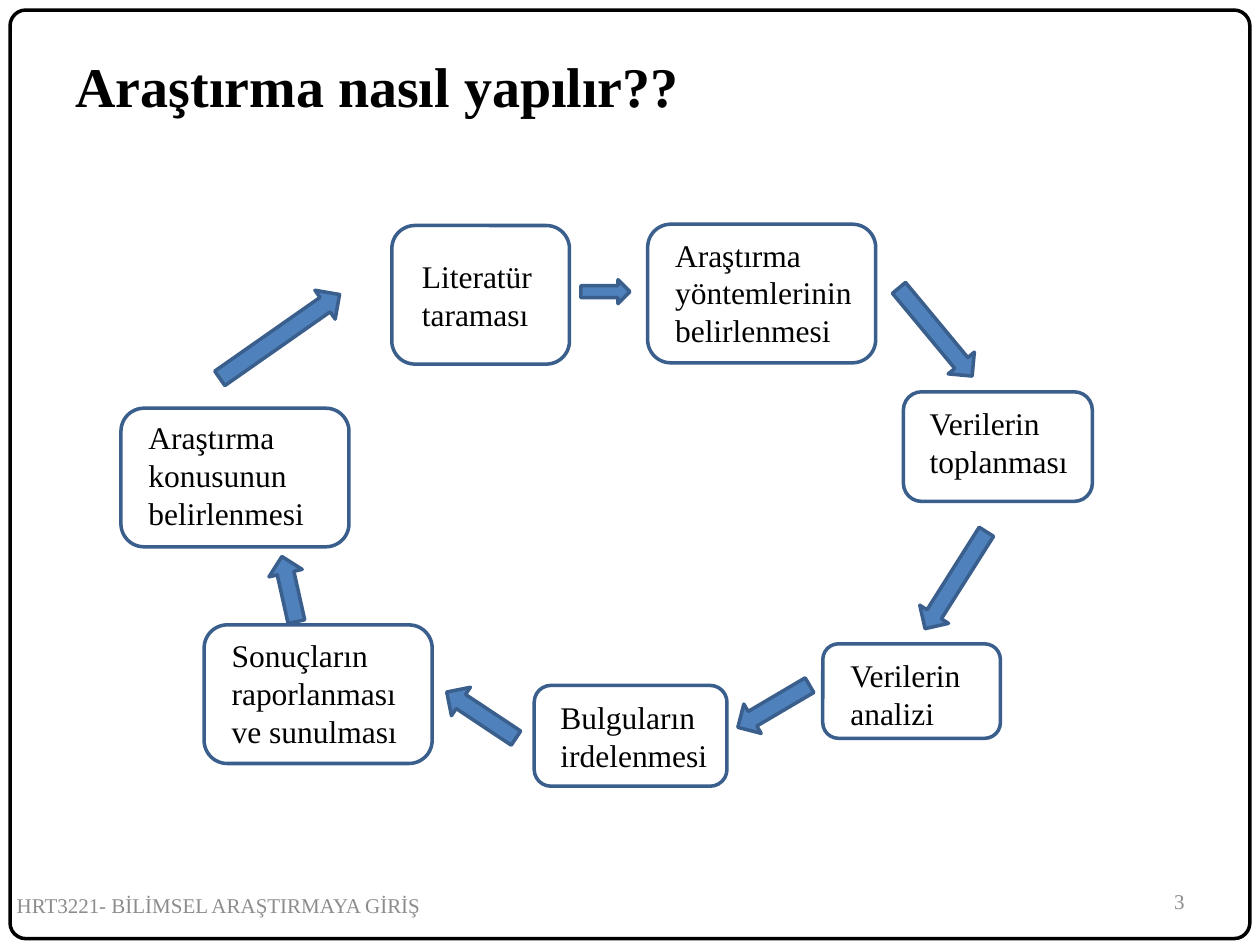
"""Build a slide showing the research cycle as seven boxes joined by arrows."""
from pptx import Presentation
from pptx.dml.color import RGBColor
from pptx.enum.shapes import MSO_SHAPE as Kind
from pptx.enum.text import MSO_ANCHOR as Anchor, PP_ALIGN as Align
from pptx.util import Inches, Pt

deck = Presentation()
deck.slide_width, deck.slide_height = Inches(10), Inches(7.5)
slide = deck.slides.add_slide(deck.slide_layouts[6])
cell = deck.slide_width / 100


def draw(kind, area, line, fill=None):
    shape = slide.shapes.add_shape(kind, *[round(n * cell) for n in area])
    shape.shadow.inherit = False
    shape.line.color.rgb = RGBColor.from_string(line)
    shape.line.width = Pt(2)
    if fill:
        shape.fill.solid()
        shape.fill.fore_color.rgb = RGBColor.from_string(fill)
    else:
        shape.fill.background()
    return shape


def write(words, area, size, color="000000", anchor=Anchor.TOP, align=Align.LEFT, bold=False):
    frame = slide.shapes.add_textbox(*[round(n * cell) for n in area]).text_frame
    frame.word_wrap = True
    frame.vertical_anchor = anchor
    line = frame.paragraphs[0]
    line.text = words
    line.alignment = align
    font = line.font
    font.name, font.size, font.bold = "Times New Roman", Pt(size), bold
    font.color.rgb = RGBColor.from_string(color)


write("Araştırma nasıl yapılır??", (5, 0.5, 90, 12.5), 32, anchor=Anchor.MIDDLE, bold=True)
write("3", (71.7, 69.5, 23.3, 4), 12, "8C8C8C", Anchor.MIDDLE, Align.RIGHT)
write("HRT3221- BİLİMSEL ARAŞTIRMAYA GİRİŞ", (0, 69.8, 34.7, 4), 12, "8C8C8C",
      Anchor.MIDDLE, Align.CENTER)

steps = [
    ("Araştırma konusunun belirlenmesi", (9.6, 32.4, 18.1, 11), (1.2, 0.3, 15.7, 10.1)),
    ("Literatür taraması", (31.1, 17.9, 14.1, 11), (1.4, 2, 11.9, 7.1)),
    ("Araştırma yöntemlerinin belirlenmesi", (51.4, 17.8, 18.1, 11), (1.2, 0.4, 17.7, 10.1)),
    ("Verilerin toplanması", (71.7, 31.1, 15, 8.7), (1.1, 0.5, 15.7, 7.1)),
    ("Verilerin analizi", (65.3, 51.1, 14.1, 7.5), (1.2, 0.5, 12.2, 7.1)),
    ("Bulguların irdelenmesi", (42.4, 54.4, 15.3, 8), (1.1, 0.5, 15.7, 7.1)),
    ("Sonuçların raporlanması ve sunulması", (16.2, 49.6, 18.1, 11), (1.2, 0.4, 15.7, 10.1)),
]
for words, box, (dx, dy, wide, high) in steps:
    draw(Kind.ROUNDED_RECTANGLE, box, "3A5F8C")
    write(words, (box[0] + dx, box[1] + dy, wide, high), 18)

arrows = [
    ((16.4, 25.3, 11.6, 2.8), 325),
    ((46.1, 22.2, 3.9, 1.9), 0),
    ((69.7, 25, 9.1, 2.7), 50.3),
    ((71.3, 44.7, 9.1, 2.7), 122.3),
    ((58.1, 54.7, 6.6, 2.7), 149.5),
    ((34.9, 55.4, 6.6, 2.7), 213.6),
    ((20.3, 45.4, 5.3, 2.7), 257.4),
]
for area, turn in arrows:
    draw(Kind.RIGHT_ARROW, area, "3A5F8C", "4F81BD").rotation = turn

border = draw(Kind.ROUNDED_RECTANGLE, (0.8, 0.8, 98.4, 73.7), "000000")
border.adjustments[0] = 0.017

deck.save("out.pptx")
